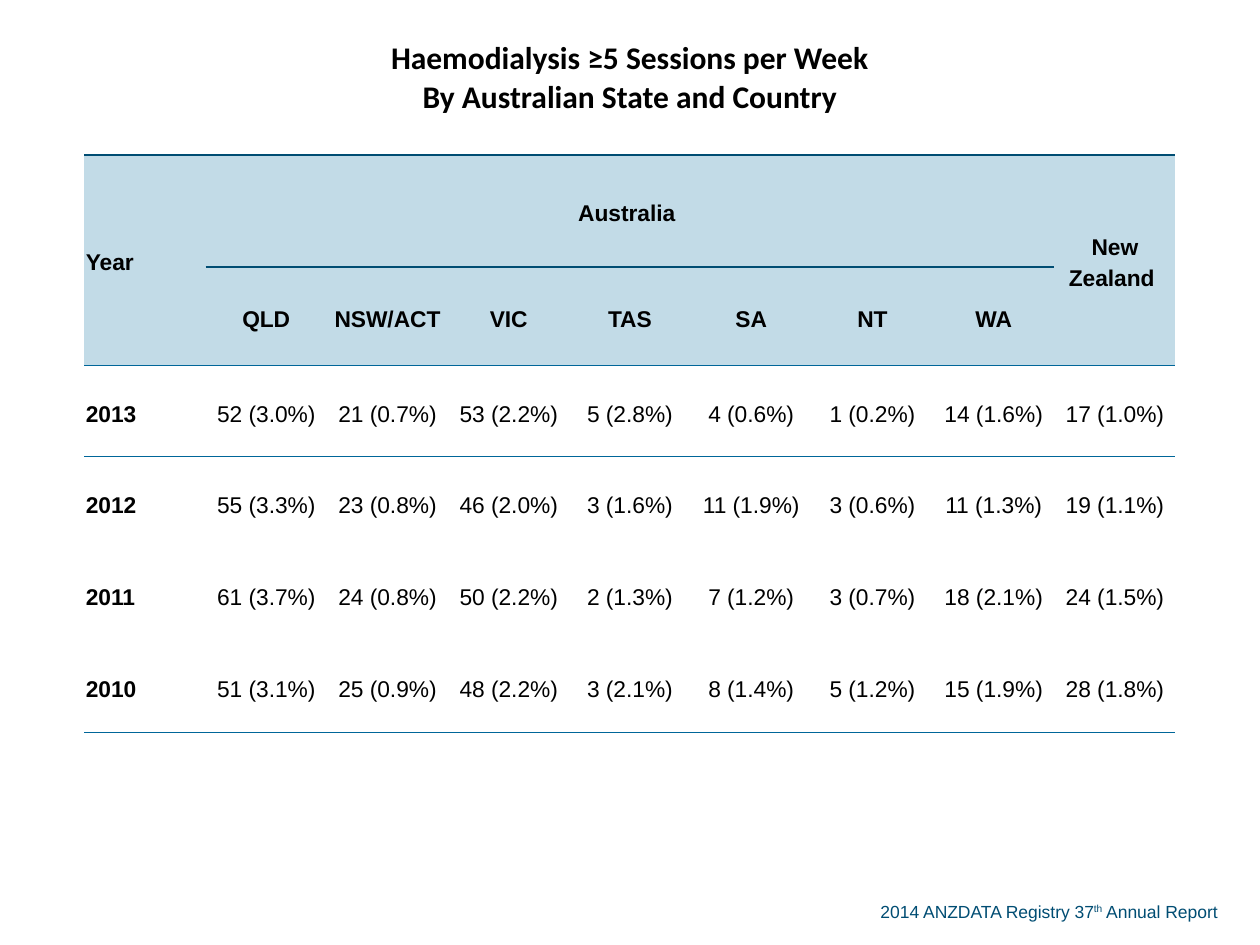
from lxml import etree
from pptx import Presentation
from pptx.dml.color import RGBColor
from pptx.enum.text import MSO_ANCHOR, PP_ALIGN
from pptx.oxml.ns import qn
from pptx.util import Cm, Pt

LEFT, CENTER = PP_ALIGN.LEFT, PP_ALIGN.CENTER
MIDDLE = MSO_ANCHOR.MIDDLE
NO_STYLE = "{2D5ABB26-0587-4C30-8999-92F81FD0307C}"
COLORS = {"text": "000000", "navy": "004D73", "rule": "006699", "header": "C2DBE7"}

# Content
TITLE = "Haemodialysis ≥5 Sessions per Week\vBy Australian State and Country"
STATES = ["QLD", "NSW/ACT", "VIC", "TAS", "SA", "NT", "WA"]
DATA = [
    ("2013", "52 (3.0%)", "21 (0.7%)", "53 (2.2%)", "5 (2.8%)", "4 (0.6%)",
     "1 (0.2%)", "14 (1.6%)", "17 (1.0%)"),
    ("2012", "55 (3.3%)", "23 (0.8%)", "46 (2.0%)", "3 (1.6%)", "11 (1.9%)",
     "3 (0.6%)", "11 (1.3%)", "19 (1.1%)"),
    ("2011", "61 (3.7%)", "24 (0.8%)", "50 (2.2%)", "2 (1.3%)", "7 (1.2%)",
     "3 (0.7%)", "18 (2.1%)", "24 (1.5%)"),
    ("2010", "51 (3.1%)", "25 (0.9%)", "48 (2.2%)", "3 (2.1%)", "8 (1.4%)",
     "5 (1.2%)", "15 (1.9%)", "28 (1.8%)"),
]
FOOTER = [("2014 ANZDATA Registry 37", False), ("th", True), (" Annual Report", False)]

# Table layout
GRID = [
    [TITLE] + [""] * 8,
    ["Year", "Australia "] + [""] * 6 + ["New Zealand "],
    [""] + STATES + [""],
    *DATA,
]
ROW_HEIGHTS = [3.12, 2.26, 1.98] + [1.85] * len(DATA)
WIDTH = 22
MERGES = [((0, 0), (0, 8)), ((1, 0), (2, 0)), ((1, 1), (1, 7)), ((1, 8), (2, 8))]
HEADER_ROWS = (1, 2)
THICK, THIN = ("navy", 1), ("rule", 0.5)
ROW_BORDERS = {0: {"B": THICK}, 1: {"T": THICK}, 2: {"B": THIN},
               3: {"T": THIN}, 6: {"B": THIN}}
CELL_FORMAT = {"margin_left": Cm(0.03), "margin_right": Cm(0.03),
               "margin_top": Cm(0.03), "margin_bottom": 0,
               "vertical_anchor": MIDDLE}
BODY_FORMAT = {"line_spacing": 1.19, "space_after": Pt(14)}


def set_attrs(obj, values):
    for name, value in values.items():
        setattr(obj, name, value)


def format_run(r, font, size, color, bold=False):
    set_attrs(r.font, {"name": font, "size": Pt(size), "bold": bold})
    r.font.color.rgb = RGBColor.from_string(COLORS[color])


def add_border(cell, side, color, width):
    ln = etree.SubElement(cell._tc.get_or_add_tcPr(), qn(f"a:ln{side}"), w=str(Pt(width)))
    fill = etree.SubElement(ln, qn("a:solidFill"))
    etree.SubElement(fill, qn("a:srgbClr"), val=COLORS[color])


def format_cell(cell, text, row, col):
    set_attrs(cell, CELL_FORMAT)
    borders = dict(ROW_BORDERS.get(row, {}))
    if row == 1 and col in (0, 8):  # these cells reach the header's lower edge
        borders["B"] = THIN
    for side, line in borders.items():
        add_border(cell, side, *line)
    if row in HEADER_ROWS:
        cell.fill.solid()
        cell.fill.fore_color.rgb = RGBColor.from_string(COLORS["header"])
    else:
        cell.fill.background()
    cell.text_frame.text = text
    p = cell.text_frame.paragraphs[0]
    p.alignment = LEFT if row and col == 0 else CENTER
    if row:
        set_attrs(p, BODY_FORMAT)
    font, size = ("Arial", 13) if row else ("Calibri", 18)
    for r in p.runs:
        format_run(r, font, size, "text", bold=row < 3 or col == 0)


prs = Presentation()
prs.slide_width, prs.slide_height = Cm(25.4), Cm(19.05)
s = prs.slides.add_slide(prs.slide_layouts[6])

# Footer
sp = s.shapes.add_textbox(Cm(17.5), Cm(18.03), Cm(7.6), Cm(0.69))
tf = sp.text_frame
tf.word_wrap = True
p = tf.paragraphs[0]
for text, raised in FOOTER:
    r = p.add_run()
    r.text = text
    format_run(r, "Arial", 10, "navy")
    if raised:
        r.font._element.set("baseline", "30000")

# Table with its title row
table = s.shapes.add_table(len(GRID), len(GRID[0]), Cm(1.7), 0,
                           Cm(WIDTH), Cm(sum(ROW_HEIGHTS))).table
table.first_row = table.horz_banding = False
table._tbl.tblPr.find(qn("a:tableStyleId")).text = NO_STYLE
for column in table.columns:
    column.width = Cm(WIDTH / len(GRID[0]))
for i, (height, texts) in enumerate(zip(ROW_HEIGHTS, GRID)):
    table.rows[i].height = Cm(height)
    for j, text in enumerate(texts):
        format_cell(table.cell(i, j), text, i, j)
for first, last in MERGES:
    table.cell(*first).merge(table.cell(*last))

prs.save("out.pptx")
